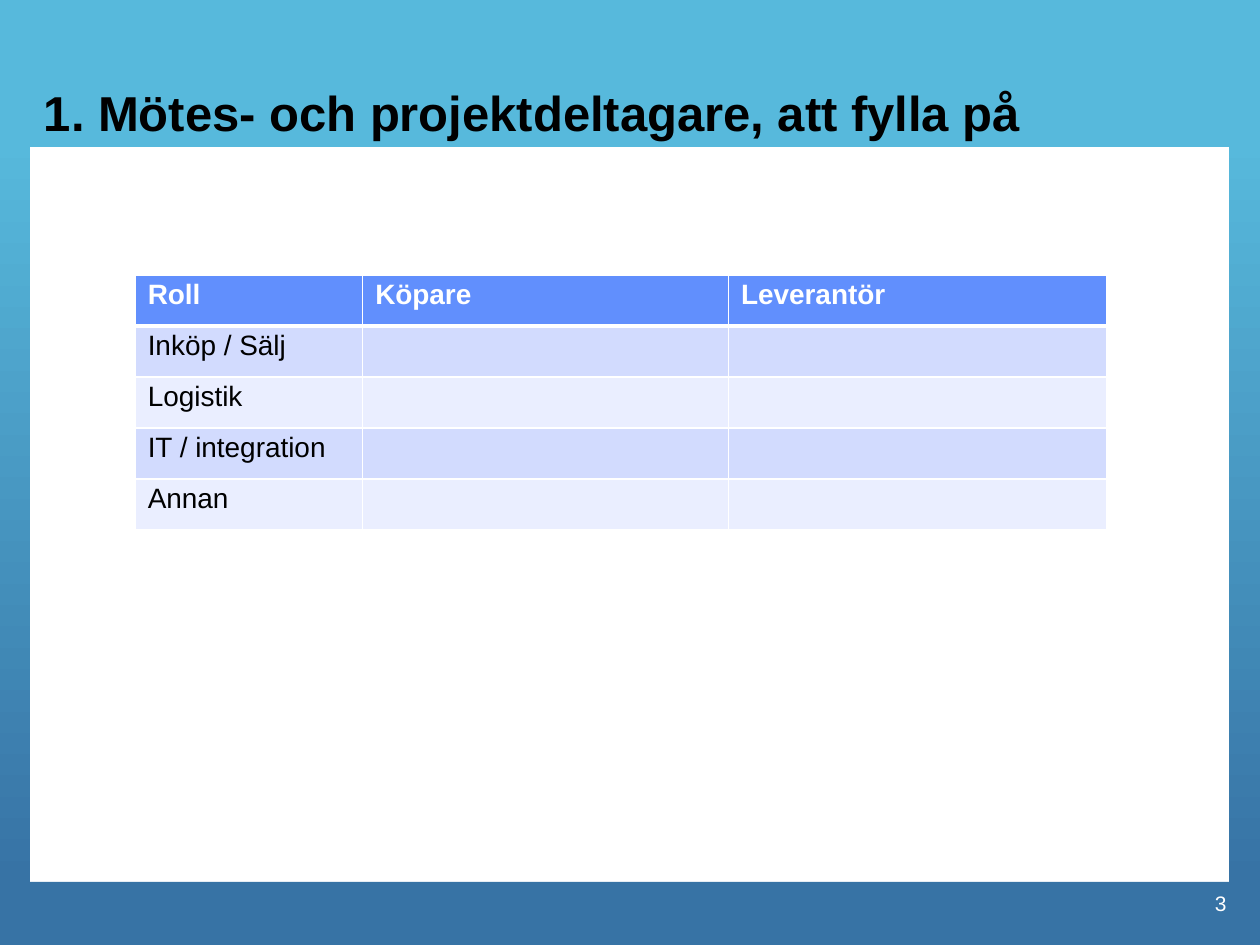
from dataclasses import dataclass
from typing import Any

from lxml import etree
from pptx import Presentation
from pptx.dml.color import RGBColor
from pptx.enum import shapes, text
from pptx.oxml import ns
from pptx.util import Pt

BLACK = RGBColor(0x00, 0x00, 0x00)
WHITE = RGBColor(0xFF, 0xFF, 0xFF)
SKY = RGBColor(0x57, 0xB9, 0xDC)
DEEP_BLUE = RGBColor(0x37, 0x73, 0xA5)
HEADER_BLUE = RGBColor(0x61, 0x8F, 0xFD)
BANDS = (RGBColor(0xD2, 0xDB, 0xFE), RGBColor(0xEA, 0xEE, 0xFF))

SLIDE_WIDTH, SLIDE_HEIGHT = 720, 540
SIDE_WIDTH = 18
COLUMN_WIDTHS = (130, 209, 216)
ROW_HEIGHT = 29.2
ROLES = (
    ("Roll", "Köpare", "Leverantör"),
    ("Inköp / Sälj", "", ""),
    ("Logistik", "", ""),
    ("IT / integration", "", ""),
    ("Annan", "", ""),
)


@dataclass
class SlideBuilder:
    slide: Any
    font_name: str = "Arial"

    def format_text(self, paragraph, size, color, bold=False):
        for run in paragraph.runs:
            run.font.name = self.font_name
            run.font.size = Pt(size)
            run.font.bold = bold
            run.font.color.rgb = color

    def band(self, left, top, width, height, color, end_color=None):
        """Add a borderless rectangle, shaded downwards if end_color is given."""
        shape = self.slide.shapes.add_shape(
            shapes.MSO_SHAPE.RECTANGLE, Pt(left), Pt(top), Pt(width), Pt(height))
        shape.shadow.inherit = False
        shape.line.fill.background()
        if end_color is None:
            shape.fill.solid()
            shape.fill.fore_color.rgb = color
        else:
            shape.fill.gradient()
            shape.fill.gradient_angle = 270
            for stop, stop_color in zip(shape.fill.gradient_stops, (color, end_color)):
                stop.color.rgb = stop_color

    def label(self, box, content, size, color, anchor, align, bold=False):
        shape = self.slide.shapes.add_textbox(*(Pt(length) for length in box))
        frame = shape.text_frame
        frame.word_wrap = True
        frame.vertical_anchor = anchor
        frame.text = content
        paragraph = frame.paragraphs[0]
        paragraph.alignment = align
        self.format_text(paragraph, size, color, bold)

    def border_cell(self, cell, widths):
        """Draw white borders; widths are left, right, top and bottom."""
        properties = cell._tc.get_or_add_tcPr()
        for index, (side, width) in enumerate(zip("LRTB", widths)):
            line = etree.Element(ns.qn(f"a:ln{side}"), w=str(Pt(width)))
            fill = etree.SubElement(line, ns.qn("a:solidFill"))
            etree.SubElement(fill, ns.qn("a:srgbClr"), val=str(WHITE))
            properties.insert(index, line)

    def table(self, left, top, rows, column_widths, row_height):
        table = self.slide.shapes.add_table(
            len(rows), len(column_widths), Pt(left), Pt(top),
            Pt(sum(column_widths)), Pt(row_height * len(rows))).table
        for column, width in zip(table.columns, column_widths):
            column.width = Pt(width)
        for row_index, values in enumerate(rows):
            table.rows[row_index].height = Pt(row_height)
            is_header = row_index == 0
            for column_index, value in enumerate(values):
                cell = table.cell(row_index, column_index)
                cell.margin_top = Pt(2.5)
                cell.fill.solid()
                cell.fill.fore_color.rgb = (
                    HEADER_BLUE if is_header else BANDS[(row_index - 1) % 2])
                top_width = 3 if row_index == 1 else 1
                self.border_cell(cell, (1, 1, top_width, 3 if is_header else 1))
                cell.text_frame.text = value
                self.format_text(cell.text_frame.paragraphs[0], 16,
                                 WHITE if is_header else BLACK, is_header)


def main():
    presentation = Presentation()
    presentation.slide_width = Pt(SLIDE_WIDTH)
    presentation.slide_height = Pt(SLIDE_HEIGHT)
    builder = SlideBuilder(presentation.slides.add_slide(presentation.slide_layouts[6]))

    builder.band(-0.75, 78, SIDE_WIDTH, 426, SKY, DEEP_BLUE)
    builder.band(0, 504, SLIDE_WIDTH, 36, DEEP_BLUE)
    builder.band(0, 0, SLIDE_WIDTH, 84, SKY)
    builder.band(SLIDE_WIDTH - SIDE_WIDTH, 78, SIDE_WIDTH, 426, SKY, DEEP_BLUE)

    builder.label((558, 498, 150, 36), "3", 12, WHITE,
                  text.MSO_ANCHOR.MIDDLE, text.PP_ALIGN.RIGHT)
    builder.label((18, 24, 684, 60), "1. Mötes- och projektdeltagare, att fylla på",
                  28, BLACK, text.MSO_ANCHOR.BOTTOM, text.PP_ALIGN.LEFT, bold=True)
    builder.table(77.25, 157, ROLES, COLUMN_WIDTHS, ROW_HEIGHT)

    presentation.save("out.pptx")


if __name__ == "__main__":
    main()
